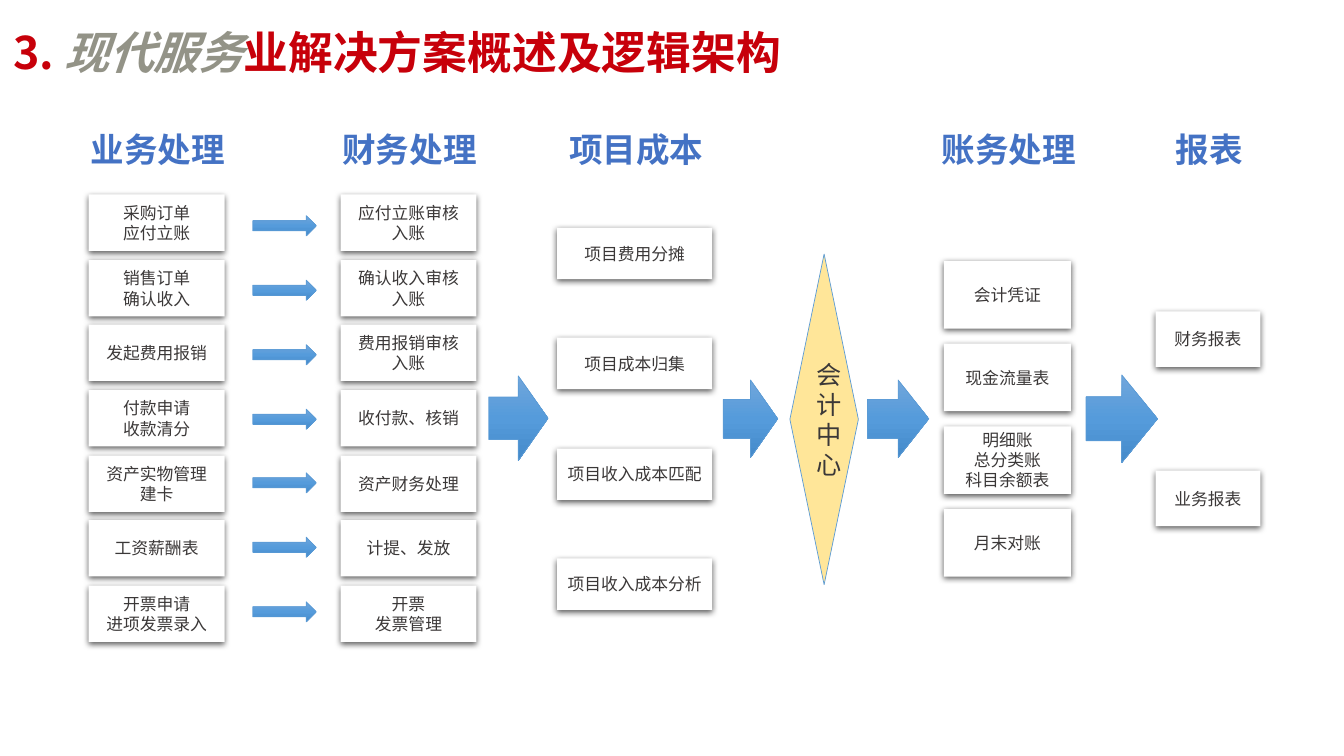
from dataclasses import dataclass

import lxml.etree
import pptx
import pptx.dml.color
import pptx.enum.dml
import pptx.enum.shapes
import pptx.enum.text
import pptx.oxml.ns
import pptx.util

EMU_PER_PX = 9144  # 100 px to the inch
CJK_FONT = "Noto Sans CJK SC"
LATIN_FONT = "Calibri"
COLORS = {
    "title": "C7000A",
    "accent": "939387",
    "heading": "4472C4",
    "text": "3B3838",
    "card": "FFFFFF",
    "shadow": "000000",
    "center": "FFE699",
    "outline": "5B9BD5",
}
ARROW_STOPS = ((0, "71A6DB"), (50, "559BDB"), (100, "448ACA"))
SHAPES = pptx.enum.shapes.MSO_SHAPE
qn = pptx.oxml.ns.qn


@dataclass(frozen=True)
class Box:
    left: int
    top: int
    width: int
    height: int

    def emu(self) -> tuple[int, ...]:
        return tuple(side * EMU_PER_PX for side in (self.left, self.top, self.width, self.height))


@dataclass(frozen=True)
class Stage:
    heading: str
    heading_left: int
    first_card: Box
    last_top: int
    cards: tuple[str, ...]


STAGES = (
    Stage("业务处理", 66, Box(88, 193, 135, 56), 581, (
        "采购订单\n应付立账", "销售订单\n确认收入", "发起费用报销", "付款申请\n收款清分",
        "资产实物管理建卡", "工资薪酬表", "开票申请\n进项发票录入")),
    Stage("财务处理", 316, Box(338, 193, 135, 56), 581, (
        "应付立账审核入账", "确认收入审核入账", "费用报销审核入账", "收付款、核销",
        "资产财务处理", "计提、发放", "开票\n发票管理")),
    Stage("项目成本", 541, Box(553, 226, 154, 51), 554, (
        "项目费用分摊", "项目成本归集", "项目收入成本匹配", "项目收入成本分析")),
    Stage("账务处理", 911, Box(937, 259, 126, 67), 505, (
        "会计凭证", "现金流量表", "明细账\n总分类账\n科目余额表", "月末对账")),
    Stage("报表", 1110, Box(1147, 309, 104, 55), 467, ("财务报表", "业务报表")),
)
ACCOUNTING_CENTER = Box(784, 252, 68, 328)
FIRST_ROW_ARROW, LAST_ROW_ARROW_TOP, ROW_ARROWS = Box(251, 214, 63, 20), 597, 7
STAGE_ARROWS = (
    Box(485, 373, 59, 84),
    Box(718, 377, 54, 77),
    Box(861, 377, 61, 77),
    Box(1078, 372, 71, 87),
)


def rgb(name: str) -> pptx.dml.color.RGBColor:
    return pptx.dml.color.RGBColor.from_string(COLORS[name])


def stack(first: Box, last_top: int, count: int) -> list[Box]:
    """Boxes of equal size, evenly spaced from the first down to last_top."""
    step = (last_top - first.top) / (count - 1)
    return [Box(first.left, round(first.top + step * i), first.width, first.height)
            for i in range(count)]


def write(frame, text: str, size: int, font: str, color: str, bold: bool = False) -> None:
    frame.word_wrap = True
    frame.text = text
    for paragraph in frame.paragraphs:
        paragraph.alignment = pptx.enum.text.PP_ALIGN.CENTER
        paragraph.font.name = font
        paragraph.font.size = pptx.util.Pt(size)
        paragraph.font.bold = bold
        paragraph.font.color.rgb = rgb(color)


def add_shape(slide, kind, box: Box):
    shape = slide.shapes.add_shape(kind, *box.emu())
    shape.shadow.inherit = False
    return shape


def outline(shape) -> None:
    shape.line.color.rgb = rgb("outline")
    shape.line.width = pptx.util.Pt(0.5)


def add_color(parent, hex_color: str):
    return lxml.etree.SubElement(parent, qn("a:srgbClr"), val=hex_color)


def add_card(slide, box: Box, text: str) -> None:
    card = add_shape(slide, SHAPES.RECTANGLE, box)
    card.fill.solid()
    card.fill.fore_color.rgb = rgb("card")
    card.line.fill.background()
    effects = card.element.spPr.find(qn("a:effectLst"))
    shadow = lxml.etree.SubElement(
        effects, qn("a:outerShdw"), blurRad=str(pptx.util.Pt(4.5)),
        dist=str(pptx.util.Pt(1.5)), dir="5400000", algn="t", rotWithShape="0")
    lxml.etree.SubElement(add_color(shadow, COLORS["shadow"]), qn("a:alpha"), val="63000")
    write(card.text_frame, text, 12, CJK_FONT, "text")
    card.text_frame.vertical_anchor = pptx.enum.text.MSO_ANCHOR.MIDDLE


def add_arrow(slide, box: Box) -> None:
    arrow = add_shape(slide, SHAPES.RIGHT_ARROW, box)
    arrow.fill.gradient()
    arrow.fill.gradient_angle = 270
    stops = arrow.element.spPr.find(qn("a:gradFill")).find(qn("a:gsLst"))
    for stop in list(stops):
        stops.remove(stop)
    for percent, hex_color in ARROW_STOPS:
        add_color(lxml.etree.SubElement(stops, qn("a:gs"), pos=str(percent * 1000)), hex_color)
    outline(arrow)


def add_stage(slide, stage: Stage) -> None:
    heading = slide.shapes.add_textbox(*Box(stage.heading_left, 123, 181, 43).emu())
    write(heading.text_frame, stage.heading, 24, LATIN_FONT, "heading", bold=True)
    boxes = stack(stage.first_card, stage.last_top, len(stage.cards))
    for box, text in zip(boxes, stage.cards):
        add_card(slide, box, text)


def add_accounting_center(slide) -> None:
    center = add_shape(slide, SHAPES.FLOWCHART_DECISION, ACCOUNTING_CENTER)
    center.fill.solid()
    center.fill.fore_color.rgb = rgb("center")
    outline(center)
    write(center.text_frame, "会计中心", 18, LATIN_FONT, "text")
    center.text_frame.vertical_anchor = pptx.enum.text.MSO_ANCHOR.MIDDLE


def set_title(slide) -> None:
    title = slide.shapes.title
    title.left, title.top, title.width, title.height = Box(13, 30, 1204, 59).emu()
    frame = title.text_frame
    frame.margin_left = frame.margin_top = frame.margin_right = frame.margin_bottom = 0
    frame.auto_size = pptx.enum.text.MSO_AUTO_SIZE.NONE
    frame.vertical_anchor = pptx.enum.text.MSO_ANCHOR.TOP
    paragraph = frame.paragraphs[0]
    paragraph.alignment = pptx.enum.text.PP_ALIGN.LEFT
    paragraph.line_spacing = pptx.util.Pt(34.3)
    paragraph.font.name = CJK_FONT
    paragraph.font.size = pptx.util.Pt(32)
    paragraph.font.bold = True
    for text, color, italic in (("3. ", "title", False), ("现代服务", "accent", True),
                                ("业解决方案概述及逻辑架构", "title", False)):
        run = paragraph.add_run()
        run.text = text
        run.font.italic = italic
        run.font.color.rgb = rgb(color)


def main() -> None:
    presentation = pptx.Presentation()
    presentation.slide_width = 1334 * EMU_PER_PX
    presentation.slide_height = 750 * EMU_PER_PX
    slide = presentation.slides.add_slide(presentation.slide_layouts.get_by_name("Title Only"))
    set_title(slide)
    for stage in STAGES:
        add_stage(slide, stage)
    add_accounting_center(slide)
    for box in (*stack(FIRST_ROW_ARROW, LAST_ROW_ARROW_TOP, ROW_ARROWS), *STAGE_ARROWS):
        add_arrow(slide, box)
    presentation.save("out.pptx")


if __name__ == "__main__":
    main()
